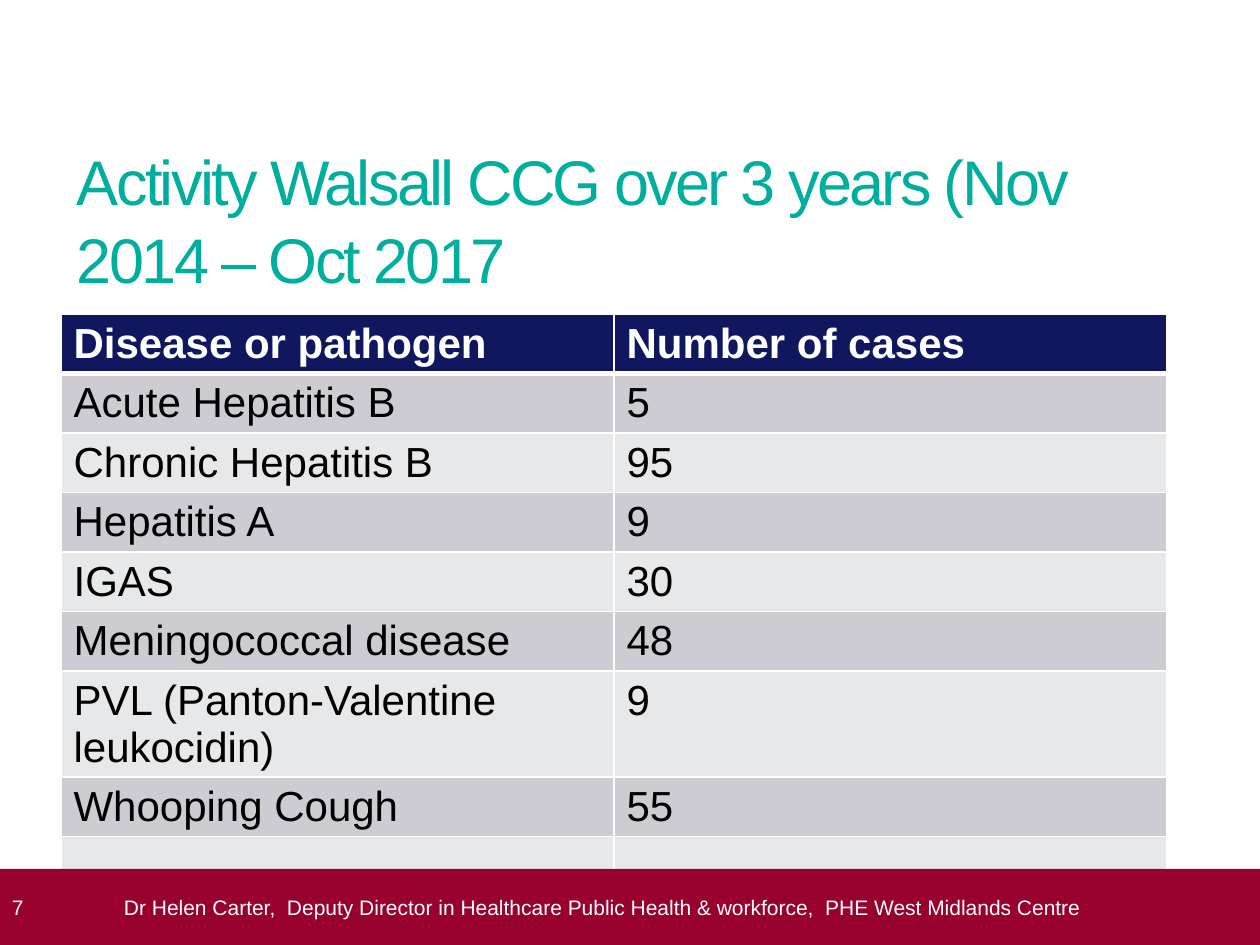
from lxml.etree import SubElement
from pptx import Presentation
from pptx.dml.color import RGBColor
from pptx.enum.shapes import MSO_SHAPE as Shape
from pptx.enum.text import MSO_ANCHOR as Anchor
from pptx.oxml.ns import qn
from pptx.util import Pt

EMU_PER_PX = 914400 / 126
NAVY, TEAL, CRIMSON = "11175E", "00AE9E", "98002E"
WHITE, BLACK = "FFFFFF", "000000"
BANDS = ("CCCCD2", "E7E8EA")
CASES = [
    ("Disease or pathogen", "Number of cases"),
    ("Acute Hepatitis B", "5"),
    ("Chronic Hepatitis B", "95"),
    ("Hepatitis A", "9"),
    ("IGAS", "30"),
    ("Meningococcal disease", "48"),
    ("PVL (Panton-Valentine leukocidin)", "9"),
    ("Whooping Cough", "55"),
    ("", ""),
    ("", ""),
]


def px(length):
    """Turn px into EMU."""
    return round(length * EMU_PER_PX)


def color(value):
    """Turn a hex string into a colour."""
    return RGBColor.from_string(value)


def write(frame, text, size=12, fill=WHITE, bold=False, tracking=0, spacing=None):
    """Write one formatted paragraph into a text frame."""
    paragraph = frame.paragraphs[0]
    paragraph.line_spacing = spacing
    run = paragraph.add_run()
    run.text = text
    font = run.font
    font.name, font.size, font.bold = "Arial", Pt(size), bold
    font.color.rgb = color(fill)
    if tracking:
        run._r.get_or_add_rPr().set("spc", str(round(tracking * 100)))


def set_frame(frame, left=0, top=0, anchor=Anchor.TOP):
    """Set wrapping, insets and anchor of a text frame."""
    frame.word_wrap = True
    frame.margin_left, frame.margin_top = px(left), px(top)
    frame.margin_right = frame.margin_bottom = 0
    frame.vertical_anchor = anchor


def add_text(slide, box, text, left=0, top=0, anchor=Anchor.TOP, **style):
    """Add a text box with one paragraph."""
    frame = slide.shapes.add_textbox(*map(px, box)).text_frame
    set_frame(frame, left, top, anchor)
    write(frame, text, **style)


def set_borders(cell, **widths):
    """Draw white cell borders with widths in points."""
    properties = cell._tc.get_or_add_tcPr()
    for index, side in enumerate("LRTB"):
        line = properties.makeelement(
            qn(f"a:ln{side}"), {"w": str(Pt(widths.get(side, 1)))}
        )
        fill = SubElement(line, qn("a:solidFill"))
        SubElement(fill, qn("a:srgbClr"), val=WHITE)
        properties.insert(index, line)


def add_cases(slide, box):
    """Add the table of cases with a header and banded rows."""
    shape = slide.shapes.add_table(len(CASES), len(CASES[0]), *map(px, box))
    table = shape.table
    for row_index, values in enumerate(CASES):
        header = row_index == 0
        for column_index, text in enumerate(values):
            cell = table.cell(row_index, column_index)
            cell.fill.solid()
            cell.fill.fore_color.rgb = color(
                NAVY if header else BANDS[(row_index - 1) % 2]
            )
            set_borders(cell, T=3 if row_index == 1 else 1, B=3 if header else 1)
            if text:
                write(cell.text_frame, text, size=24,
                      fill=WHITE if header else BLACK, bold=header)


def add_footer(slide, box):
    """Add the footer band with page number and speaker."""
    left, top, width, height = box
    band = slide.shapes.add_shape(Shape.RECTANGLE, *map(px, box))
    band.shadow.inherit = False
    band.fill.solid()
    band.fill.fore_color.rgb = color(CRIMSON)
    band.line.fill.background()
    add_text(slide, (left, top, 100, height), "7", left=12, anchor=Anchor.MIDDLE)
    add_text(
        slide, (left + 124, top, width - 149, height),
        "Dr Helen Carter,  Deputy Director in Healthcare Public Health & workforce,"
        "  PHE West Midlands Centre",
        anchor=Anchor.MIDDLE,
    )


def main():
    """Build and save the slide."""
    presentation = Presentation()
    presentation.slide_width, presentation.slide_height = px(1260), px(945)
    slide = presentation.slides.add_slide(presentation.slide_layouts[6])
    add_cases(slide, (61, 314, 1106, 511))
    add_footer(slide, (0, 869, 1260, 76))
    add_text(slide, (77, 135, 1106, 142),
             "Activity Walsall CCG over 3 years (Nov 2014 – Oct 2017",
             top=5, size=36, fill=TEAL, tracking=-1.5, spacing=1.03)
    presentation.save("out.pptx")


if __name__ == "__main__":
    main()
